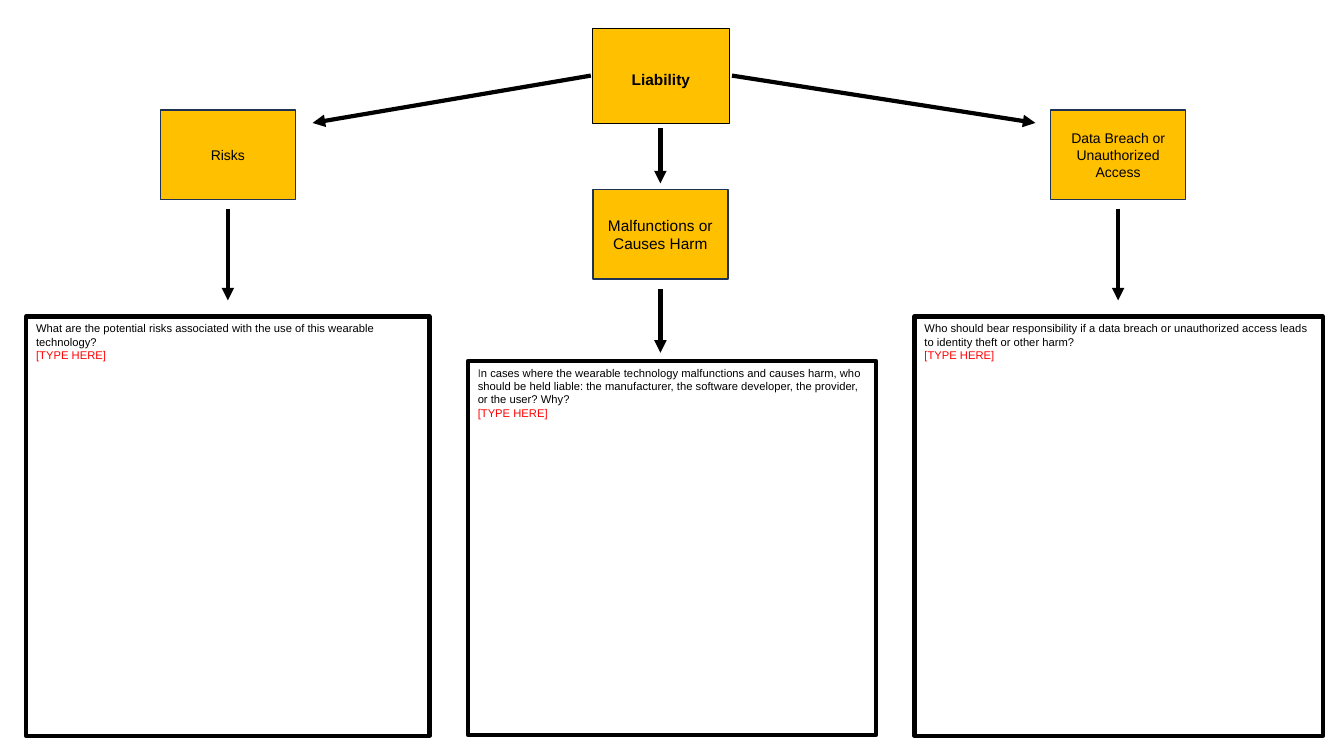
from dataclasses import dataclass

from lxml.etree import SubElement
from pptx import Presentation
from pptx.dml.color import RGBColor
from pptx.enum.shapes import MSO_CONNECTOR, MSO_SHAPE
from pptx.enum.text import MSO_ANCHOR, PP_ALIGN
from pptx.oxml.ns import qn
from pptx.util import Pt

EMU_PER_PX = 9144  # 100 px to the inch


@dataclass(frozen=True)
class Theme:
    font: str = "Arial"
    gold: str = "FFC000"
    white: str = "FFFFFF"
    black: str = "000000"
    navy: str = "1E3256"
    slate: str = "374151"
    red: str = "FF0000"
    large: int = 11
    medium: int = 10
    small: int = 8
    thick: float = 3
    thin: float = 1
    hairline: float = 0.5


THEME = Theme()


@dataclass(frozen=True)
class Run:
    text: str
    color: str = THEME.black
    bold: bool = False


@dataclass(frozen=True)
class Box:
    left: int
    top: int
    width: int
    height: int
    paragraphs: tuple[tuple[Run, ...], ...]
    size: int
    fill: str = THEME.gold
    line: str = THEME.navy
    line_width: float = THEME.thin
    align: PP_ALIGN = PP_ALIGN.CENTER
    anchor: MSO_ANCHOR = MSO_ANCHOR.MIDDLE
    inset_top: int = 5


@dataclass(frozen=True)
class Arrow:
    x1: int
    y1: int
    x2: int
    y2: int


def px(value: int) -> int:
    return value * EMU_PER_PX


def topic(left: int, top: int, text: str, size: int = THEME.medium) -> Box:
    return Box(left, top, 134, 89, ((Run(text),),), size)


def answer(left: int, top: int, width: int, height: int, *question: Run) -> Box:
    """A question with a red prompt below it, in a heavy frame."""
    return Box(left, top, width, height, (question, (Run("[TYPE HERE]", THEME.red),)),
               THEME.small, THEME.white, THEME.black, THEME.thick,
               PP_ALIGN.LEFT, MSO_ANCHOR.TOP)


BOXES = (
    Box(588, 28, 135, 94, ((Run("Liability", bold=True),),), THEME.large,
        line=THEME.black, line_width=THEME.hairline,
        anchor=MSO_ANCHOR.TOP, inset_top=42),
    topic(159, 109, "Risks"),
    topic(588, 188, "Malfunctions or Causes Harm", THEME.large),
    topic(1042, 109, "Data Breach or Unauthorized Access"),
    answer(26, 314, 400, 416,
           Run("What are the potential risks associated with the use of this "
               "wearable technology?")),
    answer(464, 358, 405, 371,
           Run("I", THEME.slate),
           Run("n cases where the wearable technology malfunctions and causes "
               "harm, who should be held liable: the manufacturer, the software "
               "developer, the provider, or the user? Why?")),
    answer(907, 314, 405, 416,
           Run("Who should bear responsibility if a data breach or unauthorized "
               "access leads to identity theft or other harm?")),
)

ARROWS = (
    Arrow(586, 75, 310, 122),
    Arrow(726, 75, 1027, 122),
    Arrow(655, 127, 655, 182),
    Arrow(226, 207, 226, 298),
    Arrow(1109, 207, 1109, 298),
    Arrow(655, 287, 655, 350),
)


def draw_box(slide, box: Box) -> None:
    sp = slide.shapes.add_shape(MSO_SHAPE.RECTANGLE, px(box.left), px(box.top),
                                px(box.width), px(box.height))
    sp.shadow.inherit = False
    sp.fill.solid()
    sp.fill.fore_color.rgb = RGBColor.from_string(box.fill)
    sp.line.color.rgb = RGBColor.from_string(box.line)
    sp.line.width = Pt(box.line_width)
    tf = sp.text_frame
    tf.word_wrap = True
    tf.vertical_anchor = box.anchor
    tf.margin_top = px(box.inset_top)
    for i, runs in enumerate(box.paragraphs):
        p = tf.add_paragraph() if i else tf.paragraphs[0]
        p.alignment = box.align
        for run in runs:
            r = p.add_run()
            r.text = run.text
            r.font.name = THEME.font
            r.font.size = Pt(box.size)
            r.font.bold = run.bold
            r.font.color.rgb = RGBColor.from_string(run.color)


def draw_arrow(slide, arrow: Arrow) -> None:
    line = slide.shapes.add_connector(MSO_CONNECTOR.STRAIGHT, px(arrow.x1), px(arrow.y1),
                                      px(arrow.x2), px(arrow.y2))
    line.line.color.rgb = RGBColor.from_string(THEME.black)
    line.line.width = Pt(THEME.thick)
    sp_pr = line._element.spPr
    SubElement(sp_pr.find(qn("a:ln")), qn("a:tailEnd"), type="triangle")
    SubElement(sp_pr, qn("a:effectLst"))


def main() -> None:
    prs = Presentation()
    prs.slide_width, prs.slide_height = px(1333), px(750)
    slide = prs.slides.add_slide(prs.slide_layouts[6])
    for box in BOXES:
        draw_box(slide, box)
    for arrow in ARROWS:
        draw_arrow(slide, arrow)
    prs.save("out.pptx")


if __name__ == "__main__":
    main()
